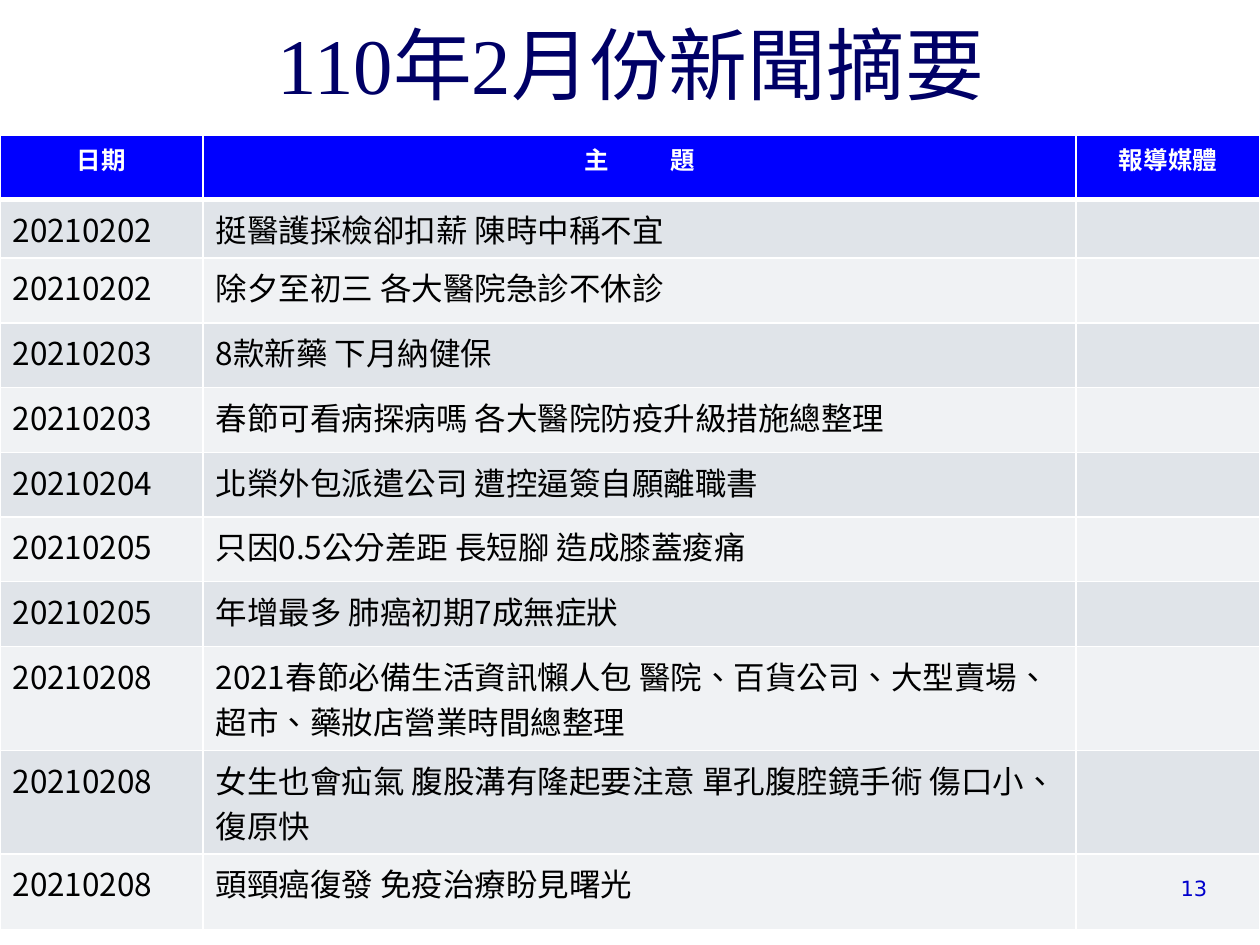
from dataclasses import dataclass

from lxml import etree
from pptx import Presentation
from pptx.dml.color import RGBColor
from pptx.enum import text
from pptx.oxml import ns
from pptx.util import Pt


@dataclass(frozen=True)
class Theme:
    title_font: str = "Times New Roman"
    table_font: str = "Noto Sans CJK SC"
    number_font: str = "DejaVu Sans"
    title_color: str = "000066"
    header_fill: str = "0000FF"
    row_fills: tuple = ("E0E4E9", "F0F2F4")
    white: str = "FFFFFF"
    black: str = "000000"
    number_color: str = "0000CC"
    title_size: int = 45
    header_size: int = 14
    row_size: int = 18
    number_size: int = 12


THEME = Theme()

HEADERS = ("日期", "主 題", "報導媒體")
NEWS = (
    ("20210202", "挺醫護採檢卻扣薪 陳時中稱不宜"),
    ("20210202", "除夕至初三 各大醫院急診不休診"),
    ("20210203", "8款新藥 下月納健保"),
    ("20210203", "春節可看病探病嗎 各大醫院防疫升級措施總整理"),
    ("20210204", "北榮外包派遣公司 遭控逼簽自願離職書"),
    ("20210205", "只因0.5公分差距 長短腳 造成膝蓋痠痛"),
    ("20210205", "年增最多 肺癌初期7成無症狀"),
    ("20210208", "2021春節必備生活資訊懶人包 醫院、百貨公司、大型賣場、超市、藥妝店營業時間總整理"),
    ("20210208", "女生也會疝氣 腹股溝有隆起要注意 單孔腹腔鏡手術 傷口小、復原快"),
    ("20210208", "頭頸癌復發 免疫治療盼見曙光"),
)
COLUMN_WIDTHS = (116, 499, 105)
ROW_HEIGHTS = (37, 25.2) + (37,) * 7 + (43.2,) * 2


def write(frame, words, *, font, size, color, bold=False,
          align=text.PP_ALIGN.LEFT, word_gap=0):
    """Fill a text frame; word_gap widens the first space by that many points."""
    paragraph = frame.paragraphs[0]
    paragraph.alignment = align
    # Tracking follows each character, so the gap is shared by two of them
    parts = [(words, 0)]
    if word_gap and " " in words:
        head, space, tail = words.partition(" ")
        parts = [(head + space, word_gap / (len(head) + 1)), (tail, 0)]
    for part, tracking in parts:
        run = paragraph.add_run()
        run.text = part
        run.font.name = font
        run.font.size = Pt(size)
        run.font.bold = bold
        run.font.color.rgb = RGBColor.from_string(color)
        properties = run.font._element
        properties.set("lang", "zh-TW")
        etree.SubElement(properties, ns.qn("a:ea"), typeface=THEME.table_font)
        if tracking:
            properties.set("spc", str(int(tracking * 100)))


def paint_cell(cell, fill, top=1, bottom=1):
    """Draw white cell borders, then the fill."""
    properties = cell._tc.get_or_add_tcPr()
    for side, width in (("L", 1), ("R", 1), ("T", top), ("B", bottom)):
        line = etree.SubElement(properties, ns.qn(f"a:ln{side}"), w=str(Pt(width)))
        solid = etree.SubElement(line, ns.qn("a:solidFill"))
        etree.SubElement(solid, ns.qn("a:srgbClr"), val=THEME.white)
    cell.fill.solid()
    cell.fill.fore_color.rgb = RGBColor.from_string(fill)


def add_title(slide, words):
    title = slide.shapes.title
    title.left, title.top, title.width, title.height = map(Pt, (45.5, 24.5, 630, 42))
    frame = title.text_frame
    frame.auto_size = text.MSO_AUTO_SIZE.NONE
    frame.vertical_anchor = text.MSO_ANCHOR.BOTTOM
    write(frame, words, font=THEME.title_font, size=THEME.title_size,
          color=THEME.title_color, align=text.PP_ALIGN.CENTER)


def add_news_table(slide):
    news = slide.shapes.add_table(
        len(ROW_HEIGHTS), len(COLUMN_WIDTHS),
        Pt(0), Pt(77.2), Pt(sum(COLUMN_WIDTHS)), Pt(sum(ROW_HEIGHTS))).table
    for column, width in zip(news.columns, COLUMN_WIDTHS):
        column.width = Pt(width)
    for row, height in zip(news.rows, ROW_HEIGHTS):
        row.height = Pt(height)

    # Header row, with a heavier rule below it
    for index, heading in enumerate(HEADERS):
        cell = news.cell(0, index)
        paint_cell(cell, THEME.header_fill, bottom=3)
        write(cell.text_frame, heading, font=THEME.table_font,
              size=THEME.header_size, color=THEME.white, bold=True,
              align=text.PP_ALIGN.CENTER, word_gap=32)

    # News rows in alternating fills; the media column stays empty
    for number, entry in enumerate(NEWS, start=1):
        for index in range(len(HEADERS)):
            paint_cell(news.cell(number, index), THEME.row_fills[(number - 1) % 2],
                       top=3 if number == 1 else 1)
        for index, words in enumerate(entry):
            write(news.cell(number, index).text_frame, words,
                  font=THEME.table_font, size=THEME.row_size, color=THEME.black)


def add_page_number(slide, number):
    box = slide.shapes.add_textbox(Pt(643.7), Pt(496.8), Pt(53.3), Pt(21.6))
    box.text_frame.word_wrap = True
    write(box.text_frame, number, font=THEME.number_font, size=THEME.number_size,
          color=THEME.number_color, align=text.PP_ALIGN.RIGHT)


def main():
    deck = Presentation()
    deck.slide_width, deck.slide_height = Pt(720), Pt(540)
    slide = deck.slides.add_slide(deck.slide_layouts.get_by_name("Title Only"))
    add_title(slide, "110年2月份新聞摘要")
    add_news_table(slide)
    add_page_number(slide, "13")
    deck.save("out.pptx")


if __name__ == "__main__":
    main()
